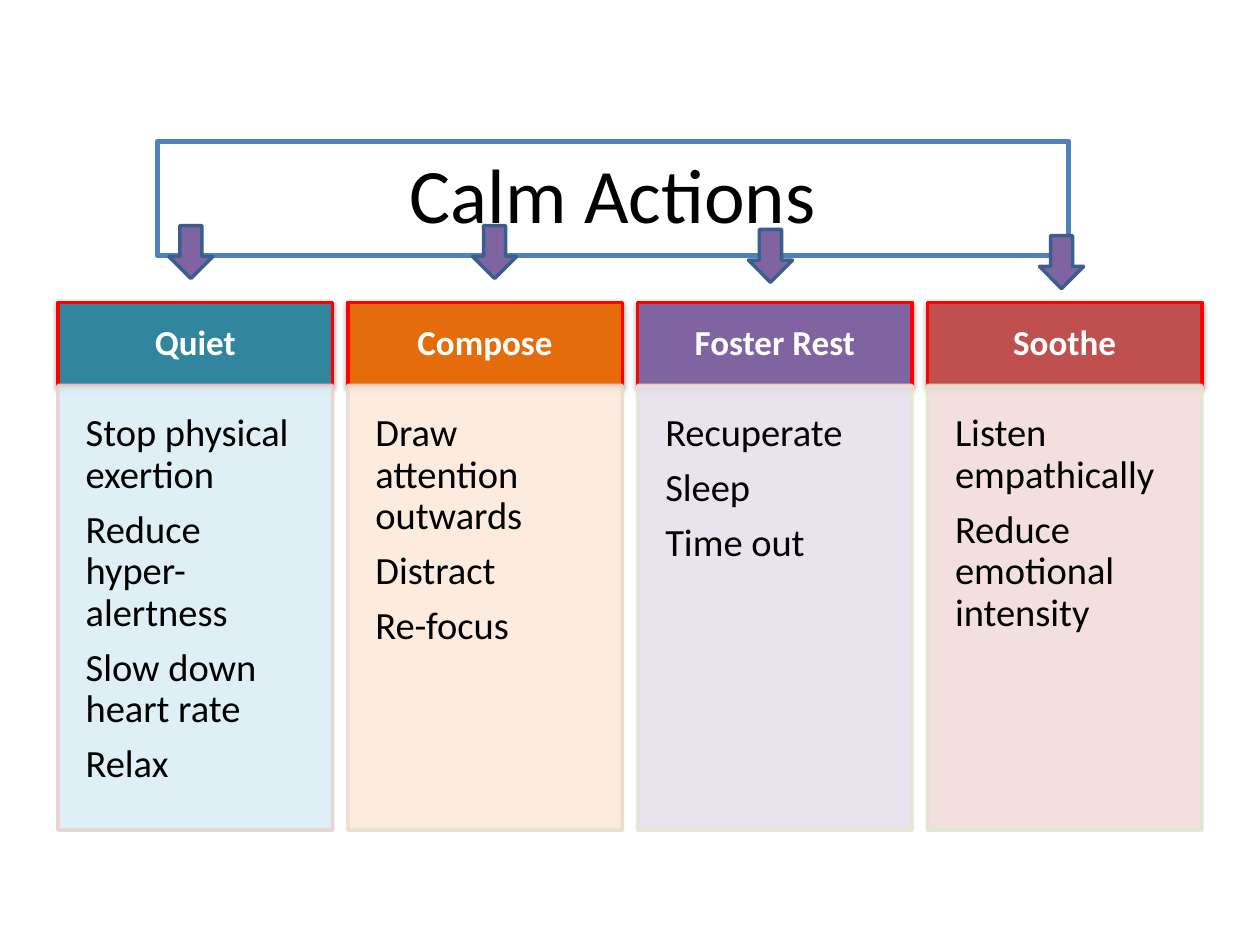
from lxml import etree
from pptx import Presentation
from pptx.dml.color import RGBColor
from pptx.enum.shapes import MSO_SHAPE
from pptx.enum.text import MSO_ANCHOR, PP_ALIGN
from pptx.oxml.ns import qn
from pptx.util import Inches, Pt

RECT, ARROW = MSO_SHAPE.RECTANGLE, MSO_SHAPE.DOWN_ARROW
TOP, MIDDLE = MSO_ANCHOR.TOP, MSO_ANCHOR.MIDDLE
LEFT, CENTER = PP_ALIGN.LEFT, PP_ALIGN.CENTER


def rgb(color):
    return RGBColor.from_string(color)


class Deck:
    font = "Calibri"

    def __init__(self, prs):
        self.s = prs.slides.add_slide(prs.slide_layouts[6])

    def shape(self, kind, box, fill, line, width=2):
        sp = self.s.shapes.add_shape(kind, *[Inches(v) for v in box])
        sp.shadow.inherit = False
        if fill:
            sp.fill.solid()
            sp.fill.fore_color.rgb = rgb(fill)
        else:
            sp.fill.background()
        sp.line.color.rgb = rgb(line)
        sp.line.width = Pt(width)
        return sp

    def text(self, sp, lines, size, color, insets, align=LEFT, anchor=TOP,
             bold=False, spacing=1.0, after=0):
        tf = sp.text_frame
        tf.word_wrap = True
        tf.vertical_anchor = anchor
        tf.margin_left = tf.margin_right = Inches(insets[0])
        tf.margin_top = tf.margin_bottom = Inches(insets[1])
        for i, line in enumerate(lines):
            p = tf.add_paragraph() if i else tf.paragraphs[0]
            p.alignment = align
            p.line_spacing = spacing
            p.space_after = Pt(after)
            r = p.add_run()
            r.text = line
            r.font.name = self.font
            r.font.size = Pt(size)
            r.font.bold = bold
            r.font.color.rgb = rgb(color)

    def shadow(self, sp):
        effects = sp._element.spPr.find(qn("a:effectLst"))
        shade = etree.SubElement(
            effects, qn("a:outerShdw"), blurRad=str(Pt(3.1)),
            dist=str(Pt(1.6)), dir="5400000", rotWithShape="0")
        color = etree.SubElement(shade, qn("a:srgbClr"), val="000000")
        etree.SubElement(color, qn("a:alpha"), val="38000")

    def fade(self, sp, percent):
        for color in sp._element.spPr.iter(qn("a:srgbClr")):
            etree.SubElement(color, qn("a:alpha"), val=str(percent * 1000))

    def title(self, text, box):
        sp = self.shape(RECT, box, None, "4F81BD", 3)
        self.text(sp, [text], 44, "000000", (0.07, 0.04), CENTER)

    def header(self, text, box, fill):
        sp = self.shape(RECT, box, fill, "FF0000")
        self.shadow(sp)
        self.text(sp, [text], 20, "FFFFFF", (0.17, 0.17), CENTER, MIDDLE,
                  bold=True, spacing=0.9)

    def body(self, lines, box, fill, line):
        sp = self.shape(RECT, box, fill, line)
        self.fade(sp, 90)
        self.text(sp, lines, 22, "000000", (0.22, 0.22), spacing=0.9, after=7.7)

    def arrow(self, x, y):
        self.shape(ARROW, (x, y, 0.35, 0.42), "8064A2", "3A5F8C")


# Heading, header fill, body fill, body outline, actions
COLUMNS = [
    ("Quiet", "31859C", "DBEEF4", "E8D0D0",
     ["Stop physical exertion", "Reduce hyper-alertness",
      "Slow down heart rate", "Relax"]),
    ("Compose", "E46C0A", "FDEADA", "E8DCD0",
     ["Draw attention outwards", "Distract", "Re-focus"]),
    ("Foster Rest", "8064A2", "E6E0EC", "E7E6D1",
     ["Recuperate", "Sleep", "Time out"]),
    ("Soothe", "C0504D", "F2DCDB", "DEE7D1",
     ["Listen empathically", "Reduce emotional intensity"]),
]
ARROWS = [(1.34, 1.79), (3.75, 1.79), (8.25, 1.87), (5.94, 1.82)]


def main():
    prs = Presentation()
    prs.slide_width, prs.slide_height = Inches(10), Inches(7.5)
    deck = Deck(prs)

    # Title
    deck.title("Calm Actions", (1.25, 1.12, 7.23, 0.91))

    # Four columns
    left, pitch, width = 0.46, 2.3, 2.18
    for i, (heading, dark, light, outline, actions) in enumerate(COLUMNS):
        x = left + i * pitch
        deck.header(heading, (x, 2.4, width, 0.66), dark)
        deck.body(actions, (x, 3.06, width, 3.53), light, outline)

    # Arrows from the title to the columns
    for x, y in ARROWS:
        deck.arrow(x, y)

    prs.save("out.pptx")


if __name__ == "__main__":
    main()
